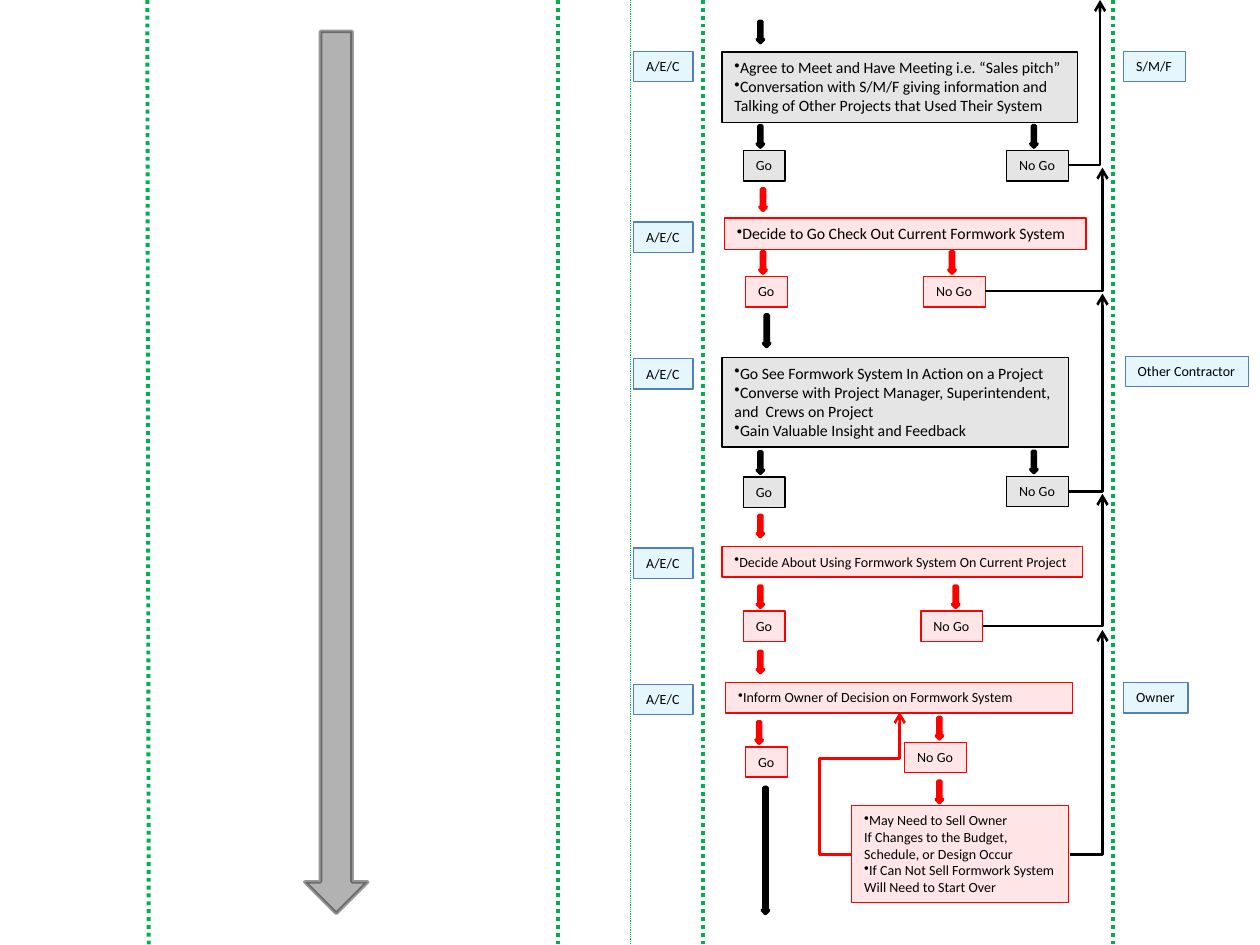
from dataclasses import dataclass

from pptx import Presentation
from pptx.dml.color import RGBColor as Rgb
from pptx.enum.dml import MSO_LINE as Dash
from pptx.enum.shapes import MSO_CONNECTOR as Conn, MSO_SHAPE as Shape
from pptx.enum.text import MSO_AUTO_SIZE as Fit
from pptx.oxml.ns import qn
from pptx.oxml.xmlchemy import OxmlElement as Node
from pptx.util import Pt


@dataclass(frozen=True)
class Theme:
    font: str = "Calibri"
    black: str = "000000"
    red: str = "FF0000"
    green: str = "00B050"
    sky: str = "00B0F0"
    blue: str = "4F81BD"
    big: int = 9
    small: int = 8
    tint: int = 10
    thin: float = 0.75
    bold: float = 2


def add(parent, tag, **attrs):
    node = Node(tag)
    for key, val in attrs.items():
        node.set(key, str(val))
    parent.append(node)
    return node


def fade(parent, pct):
    """Make the solid fill inside parent pct percent opaque."""
    add(parent.find(qn("a:solidFill"))[0], "a:alpha", val=pct * 1000)


class Page:
    def __init__(self, slide, theme):
        self.slide = slide
        self.theme = theme

    def stroke(self, item, ink, width):
        item.line.color.rgb = Rgb.from_string(ink)
        item.line.width = Pt(width)

    def paint(self, item, fill, ink, width):
        item.fill.solid()
        item.fill.fore_color.rgb = Rgb.from_string(fill)
        self.stroke(item, ink, width)

    def arrow(self, x, y, high, ink, wide=3.6):
        item = self.slide.shapes.add_shape(
            Shape.DOWN_ARROW, Pt(x), Pt(y), Pt(wide), Pt(high))
        item.shadow.inherit = False
        self.paint(item, ink, ink, self.theme.bold)
        return item

    def box(self, at, text, fill, ink, size=None, wrap=False):
        """Tinted text box; lines that start with • become bullets."""
        item = self.slide.shapes.add_textbox(*map(Pt, at))
        self.paint(item, fill, ink, self.theme.thin)
        fade(item._element.spPr, self.theme.tint)
        frame = item.text_frame
        frame.word_wrap = wrap
        frame.auto_size = Fit.SHAPE_TO_FIT_TEXT
        frame.text = text.replace("•", "")
        for line, para in zip(text.split("\n"), frame.paragraphs):
            if line.startswith("•"):
                add(para._p.get_or_add_pPr(), "a:buChar", char="•")
            for run in para.runs:
                run.font.name = self.theme.font
                run.font.size = Pt(size or self.theme.small)
                run.font.color.rgb = Rgb.from_string(self.theme.black)

    def tag(self, x, y, wide, text):
        self.box((x, y, wide, 17.3), text, self.theme.sky, self.theme.blue)

    def link(self, kind, start, end, ink, width):
        item = self.slide.shapes.add_connector(kind, *map(Pt, start + end))
        self.stroke(item, ink, width)
        add(item._element.spPr, "a:effectLst")
        return item

    def rule(self, top, foot, width):
        item = self.link(Conn.STRAIGHT, (top, 0), (foot, 540),
                         self.theme.green, width)
        item.line.dash_style = Dash.ROUND_DOT

    def bend(self, start, end, ink, preset="bentConnector2", adjust=()):
        """Elbow arrow of the given preset, with its adjust values."""
        item = self.link(Conn.ELBOW, start, end, ink, 1.5)
        props = item._element.spPr
        geom = props.find(qn("a:prstGeom"))
        geom.set("prst", preset)
        guides = geom.find(qn("a:avLst"))
        for num, val in enumerate(adjust, 1):
            add(guides, "a:gd", name=f"adj{num}", fmla=f"val {val}")
        add(props.find(qn("a:ln")), "a:tailEnd", type="arrow")
        return item

    def gate(self, x, y, tip, wide, text, ink):
        """Answer box with the short arrow that leads into it at x = tip."""
        self.arrow(tip, y - 14.3, 12.2, ink)
        self.box((x, y, wide, 17.3), text, ink, ink)


def main():
    theme = Theme()
    black, red = theme.black, theme.red
    deck = Presentation()
    deck.slide_width, deck.slide_height = Pt(720), Pt(540)
    page = Page(deck.slides.add_slide(deck.slide_layouts[6]), theme)

    for top, foot, width in [(319, 319, 2.25), (84.2, 85, 2.25),
                             (401.8, 401.8, 2.25), (635.8, 635.8, 2.25),
                             (360, 360, 0.5)]:
        page.rule(top, foot, width)

    # ink, size, text, box, role top, entry arrow, go and no-go (x, y, tip)
    steps = [
        (black, theme.big,
         "•Agree to Meet and Have Meeting i.e. “Sales pitch”\n"
         "•Conversation with S/M/F giving information and\n"
         "Talking of Other Projects that Used Their System",
         (412.6, 29.7, 203, 40.3), 29.5, (432.7, 12.2, 12.2),
         (424.8, 86.2, 432.7), (575.3, 86.2, 589)),
        (red, theme.big, "•Decide to Go Check Out Current Formwork System",
         (414, 124.5, 206.6, 18), 126.9, (434.2, 108, 12.2),
         (426.2, 158.2, 434.2), (527.8, 158.2, 542.2)),
        (black, theme.big,
         "•Go See Formwork System In Action on a Project\n"
         "•Converse with Project Manager, Superintendent,\n"
         "and  Crews on Project\n"
         "•Gain Valuable Insight and Feedback",
         (412.6, 204.3, 198, 51.1), 205.1, (436.3, 180, 18),
         (424.8, 272.6, 432.7), (575.3, 272.2, 589)),
        (red, theme.small,
         "•Decide About Using Formwork System On Current Project",
         (412.6, 312.5, 205.9, 17.3), 313.2, (432.7, 294.5, 12.2),
         (424.8, 349.2, 432.7), (526.3, 349.2, 544.3)),
        (red, theme.small, "•Inform Owner of Decision on Formwork System",
         (414.7, 390.2, 198, 17.3), 391, (432.7, 372.2, 12.2),
         (426.2, 426.8, 432), (517, 424.3, 535)),
    ]
    last = steps[-1]
    for step in steps:
        ink, size, text, at, role, entry, yes, no = step
        page.arrow(*entry, ink)
        page.box(at, text, ink, ink, size, wrap=step is last)
        page.tag(362.2, role, 33.8, "A/E/C")
        page.gate(*yes, 23.8, "Go", ink)
        page.gate(*no, 35.3, "No Go", ink)

    for x, y, wide, text in [(642.2, 29.5, 35.3, "S/M/F"),
                             (643, 203.8, 70.6, "Other Contractor"),
                             (642.2, 390.2, 36.7, "Owner")]:
        page.tag(x, y, wide, text)

    page.arrow(535, 446.4, 12.2, red)
    page.box((486.7, 460.2, 123.8, 55.4),
             "•May Need to Sell Owner\nIf Changes to the Budget,\n"
             "Schedule, or Design Occur\n•If Can Not Sell Formwork System\n"
             "Will Need to Start Over", red, red)
    page.arrow(435.6, 450, 72, black)

    for start, end in [((610.6, 94.3), (628.6, 0)),
                       ((563, 166.3), (630, 95.8)),
                       ((610.6, 280.8), (630, 167.8)),
                       ((561.6, 357.8), (630, 282.2)),
                       ((611.3, 488.2), (630, 360))]:
        page.bend(start, end, black)
    loop = page.bend((486.7, 488.2), (514.1, 406.8), red,
                     "bentConnector4", (-66700, 67100))
    frame = loop._element.spPr.find(qn("a:xfrm"))
    del frame.attrib["flipV"]
    frame.set("rot", "10800000")
    frame.set("flipH", "1")

    shaft = page.arrow(174.2, 18, 504, black, wide=36)
    props = shaft._element.spPr
    fade(props, 30)
    fade(props.find(qn("a:ln")), 40)

    deck.save("out.pptx")


if __name__ == "__main__":
    main()
